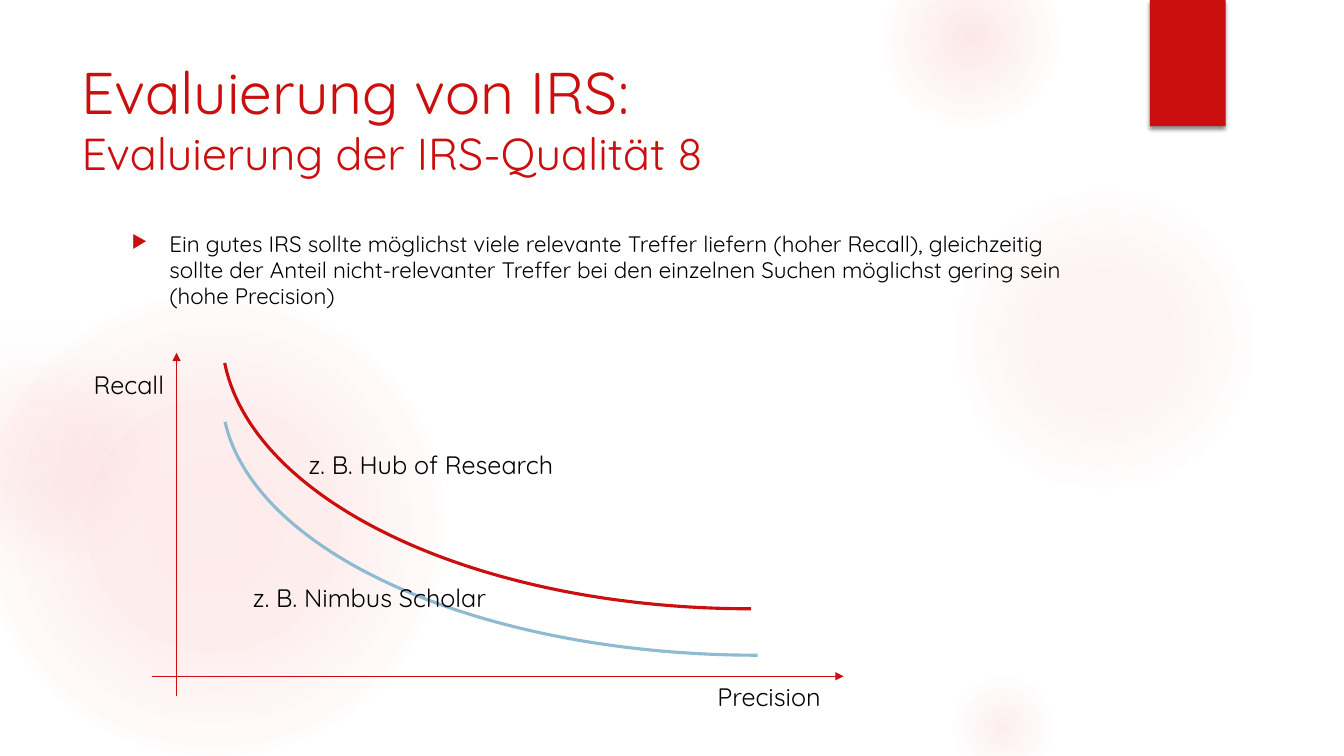
import pptx
import pptx.dml.color
import pptx.enum.shapes
import pptx.enum.text
import pptx.oxml
import pptx.oxml.ns
import pptx.util
from lxml import etree

Cm = pptx.util.Cm
Pt = pptx.util.Pt
SHAPE = pptx.enum.shapes.MSO_SHAPE
NAMESPACE = pptx.oxml.ns.nsdecls("a")
FONT = "Quicksand"
COLORS = {
    "red": "CB0F0F",
    "blue": "8EBBD2",
    "black": "000000",
    "glow": "F35C5C",
    "gray": "F3F3F3",
}


def rgb(name):
    return pptx.dml.color.RGBColor.from_string(COLORS[name])


def add_xml(parent, xml):
    element = pptx.oxml.parse_xml(xml)
    parent.append(element)
    return element


def format_run(run, size, color):
    run.font.name = FONT
    run.font.size = Pt(size)
    run.font.color.rgb = rgb(color)


def add_glow(slide, left, top, diameter, stops):
    shape = slide.shapes.add_shape(
        SHAPE.OVAL, Cm(left), Cm(top), Cm(diameter), Cm(diameter))
    shape.shadow.inherit = False
    shape.line.fill.background()
    stop_xml = "".join(
        f'<a:gs pos="{position * 1000}"><a:srgbClr val="{COLORS[color]}">'
        f'<a:alpha val="{alpha * 1000}"/></a:srgbClr></a:gs>'
        for position, color, alpha in stops)
    gradient = pptx.oxml.parse_xml(
        f'<a:gradFill {NAMESPACE} rotWithShape="1"><a:gsLst>{stop_xml}</a:gsLst>'
        '<a:path path="circle"><a:fillToRect l="50000" t="50000" r="50000" b="50000"/>'
        '</a:path></a:gradFill>')
    shape._element.spPr.find(pptx.oxml.ns.qn("a:prstGeom")).addnext(gradient)


def add_ribbon(slide):
    shape = slide.shapes.add_shape(
        SHAPE.RECTANGLE, Cm(28.98), Cm(0), Cm(1.91), Cm(3.18))
    shape.fill.solid()
    shape.fill.fore_color.rgb = rgb("red")
    shape.line.fill.background()
    shape.shadow.inherit = False
    effects = shape._element.spPr.find(pptx.oxml.ns.qn("a:effectLst"))
    add_xml(effects,
            f'<a:outerShdw {NAMESPACE} blurRad="{Pt(3)}" dist="{Pt(2)}" dir="5400000" '
            f'rotWithShape="0"><a:srgbClr val="{COLORS["black"]}">'
            '<a:alpha val="45000"/></a:srgbClr></a:outerShdw>')


def set_title(slide):
    title = slide.shapes.title
    title.left, title.top, title.width, title.height = Cm(1.8), Cm(1.27), Cm(26.14), Cm(3.89)
    frame = title.text_frame
    frame.text = "Evaluierung von IRS: \vEvaluierung der IRS-Qualität 8"
    frame.word_wrap = True
    frame.auto_size = pptx.enum.text.MSO_AUTO_SIZE.NONE
    frame.vertical_anchor = pptx.enum.text.MSO_ANCHOR.TOP
    paragraph = frame.paragraphs[0]
    paragraph.alignment = pptx.enum.text.PP_ALIGN.LEFT
    for run, size in zip(paragraph.runs, (42, 32)):
        format_run(run, size, "red")
    slide.shapes._spTree.append(title._element)


def add_bullet(slide, text):
    box = slide.shapes.add_textbox(Cm(3.07), Cm(5.72), Cm(24.84), Cm(2.74))
    frame = box.text_frame
    frame.text = text
    frame.word_wrap = True
    paragraph = frame.paragraphs[0]
    paragraph.line_spacing = 0.97
    paragraph.space_after = Pt(6)
    format_run(paragraph.runs[0], 16, "black")
    properties = paragraph._p.get_or_add_pPr()
    properties.set("marL", str(Cm(0.95)))
    properties.set("indent", str(-Cm(0.95)))
    add_xml(properties, f'<a:buClr {NAMESPACE}><a:srgbClr val="{COLORS["red"]}"/></a:buClr>')
    add_xml(properties, f'<a:buSzPct {NAMESPACE} val="80000"/>')
    add_xml(properties, f'<a:buChar {NAMESPACE} char="▶"/>')


def add_axis(slide, start_x, start_y, end_x, end_y):
    axis = slide.shapes.add_connector(
        pptx.enum.shapes.MSO_CONNECTOR.STRAIGHT,
        Cm(start_x), Cm(start_y), Cm(end_x), Cm(end_y))
    axis.line.color.rgb = rgb("red")
    axis.line.width = Pt(0.75)
    etree.SubElement(axis.line._get_or_add_ln(),
                     pptx.oxml.ns.qn("a:tailEnd"), type="triangle")
    etree.SubElement(axis._element.spPr, pptx.oxml.ns.qn("a:effectLst"))


def add_curve(slide, top, width, height, color):
    curve = slide.shapes.add_shape(
        SHAPE.ARC, Cm(5.59), Cm(top), Cm(width), Cm(height))
    curve.adjustments[0] = 161.87
    curve.adjustments[1] = 214.14
    curve.rotation = 180
    curve.shadow.inherit = False
    curve.fill.background()
    curve.line.color.rgb = rgb(color)
    curve.line.width = Pt(2.25)


def add_label(slide, text, left, top, width):
    box = slide.shapes.add_textbox(Cm(left), Cm(top), Cm(width), Cm(1.02))
    frame = box.text_frame
    frame.text = text
    frame.word_wrap = False
    frame.auto_size = pptx.enum.text.MSO_AUTO_SIZE.SHAPE_TO_FIT_TEXT
    format_run(frame.paragraphs[0].runs[0], 18, "black")


def main():
    presentation = pptx.Presentation()
    presentation.slide_width = Cm(33.87)
    presentation.slide_height = Cm(19.05)
    slide = presentation.slides.add_slide(presentation.slide_layouts[5])

    for left, top, diameter, stops in (
        (-0.43, 7.42, 11.63, ((0, "glow", 11), (36, "glow", 10), (75, "glow", 0))),
        (-2.34, 8.05, 6.55, ((0, "glow", 8), (36, "glow", 5), (71, "gray", 0))),
        (23.9, 4.65, 7.82, ((0, "glow", 7), (36, "glow", 6), (69, "glow", 0))),
        (22.23, -1.27, 4.45, ((0, "glow", 14), (36, "glow", 7), (73, "glow", 0))),
        (23.9, 16.94, 2.74, ((0, "glow", 10), (31, "glow", 5), (66, "glow", 0))),
    ):
        add_glow(slide, left, top, diameter, stops)
    add_ribbon(slide)
    set_title(slide)
    add_bullet(slide, "Ein gutes IRS sollte möglichst viele relevante Treffer liefern "
                      "(hoher Recall), gleichzeitig sollte der Anteil nicht-relevanter "
                      "Treffer bei den einzelnen Suchen möglichst gering sein "
                      "(hohe Precision)")

    add_axis(slide, 4.45, 17.55, 4.45, 8.89)
    add_axis(slide, 3.84, 17.04, 21.26, 17.04)
    add_curve(slide, 3.3, 26.95, 13.21, "blue")
    add_curve(slide, 1.52, 26.62, 13.82, "red")
    for text, left, top, width in (
        ("Recall", 2.11, 9.17, 2.44),
        ("Precision", 17.83, 17.04, 3.23),
        ("z. B. Hub of Research", 7.52, 11.2, 6.81),
        ("z. B. Nimbus Scholar", 6.12, 14.55, 7.24),
    ):
        add_label(slide, text, left, top, width)

    presentation.save("out.pptx")


if __name__ == "__main__":
    main()
